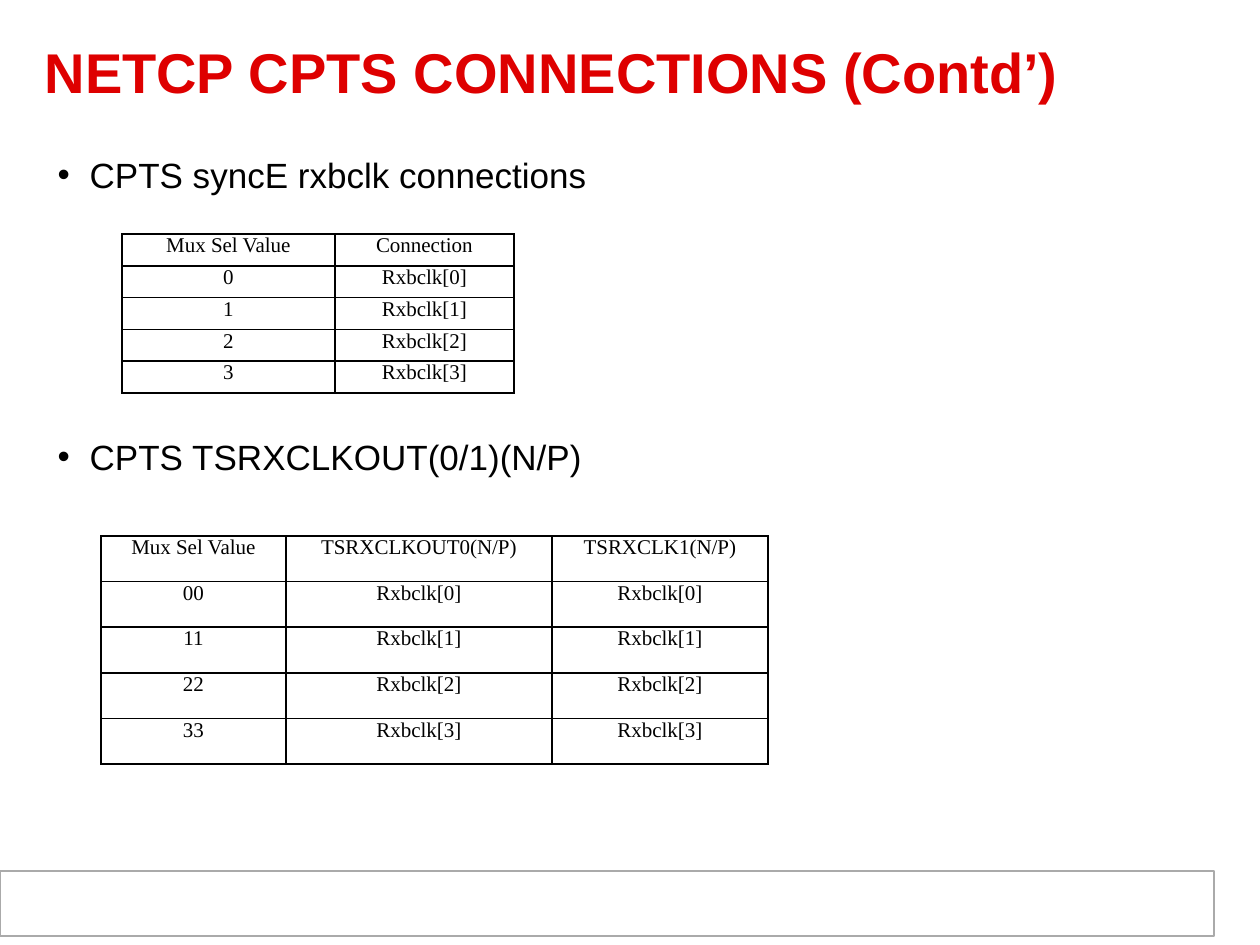
import pptx
import pptx.dml.color
import pptx.enum.shapes
import pptx.enum.text
import pptx.oxml
import pptx.oxml.ns
import pptx.util
from dataclasses import dataclass

ALIGN = pptx.enum.text.PP_ALIGN
ANCHOR = pptx.enum.text.MSO_ANCHOR
FIT = pptx.enum.text.MSO_AUTO_SIZE
PT = pptx.util.Pt


def px(count):
    return round(count * 914400 / 126)


def rgb(code):
    return pptx.dml.color.RGBColor.from_string(code)


def assign(target, values):
    for name, value in values.items():
        setattr(target, name, value)


@dataclass(frozen=True)
class Theme:
    red: str = "DE0000"
    black: str = "000000"
    white: str = "FFFFFF"
    gray: str = "AAAAAA"
    sans: str = "Arial"
    serif: str = "Times New Roman"
    title: int = 32
    body: int = 20
    cell: int = 12


class Deck:
    def __init__(self, theme):
        self.theme = theme
        self.file = pptx.Presentation()
        assign(self.file, {"slide_width": px(1260), "slide_height": px(945)})
        self.slide = self.file.slides.add_slide(self.file.slide_layouts[1])

    def place(self, shape, box):
        assign(shape, dict(zip(("left", "top", "width", "height"), map(px, box))))

    def style(self, para, face, size, color, bold=False):
        assign(para.font, {"name": face, "size": PT(size), "bold": bold})
        para.font.color.rgb = rgb(color)

    def bar(self, *box):
        shape = self.slide.shapes.add_shape(
            pptx.enum.shapes.MSO_SHAPE.RECTANGLE, *map(px, box))
        shape.shadow.inherit = False
        shape.fill.solid()
        shape.fill.fore_color.rgb = rgb(self.theme.white)
        shape.line.color.rgb = rgb(self.theme.gray)
        shape.line.width = PT(0.75)

    def title(self, text, *box):
        shape = self.slide.shapes.title
        self.place(shape, box)
        frame = shape.text_frame
        frame.text = text
        assign(frame, {"vertical_anchor": ANCHOR.MIDDLE, "auto_size": FIT.NONE})
        para = frame.paragraphs[0]
        assign(para, {"alignment": ALIGN.LEFT, "line_spacing": 0.85})
        self.style(para, self.theme.sans, self.theme.title, self.theme.red, True)

    def bullets(self, items, gap, *box):
        """Fill the body, leaving gap points between items for the tables."""
        shape = self.slide.placeholders[1]
        self.place(shape, box)
        frame = shape.text_frame
        frame.text = "\n".join(items)
        assign(frame, {"vertical_anchor": ANCHOR.TOP, "auto_size": FIT.NONE})
        for index, para in enumerate(frame.paragraphs):
            para.space_before = PT(gap if index else 0)
            props = para._p.get_or_add_pPr()
            props.set("marL", str(px(32)))
            props.set("indent", str(-px(32)))
            mark = pptx.oxml.parse_xml(
                f'<a:buChar {pptx.oxml.ns.nsdecls("a")} char="•"/>')
            props.append(mark)
            self.style(para, self.theme.sans, self.theme.body, self.theme.black)

    def border(self, cell):
        props = cell._tc.get_or_add_tcPr()
        for index, side in enumerate("LRTB"):
            line = pptx.oxml.parse_xml(
                f'<a:ln{side} {pptx.oxml.ns.nsdecls("a")} w="{PT(1)}">'
                f'<a:solidFill><a:srgbClr val="{self.theme.black}"/></a:solidFill>'
                f'</a:ln{side}>')
            props.insert(index, line)

    def table(self, rows, widths, left, top, height):
        grid = self.slide.shapes.add_table(
            len(rows), len(widths), px(left), px(top),
            px(sum(widths)), px(height)).table
        assign(grid, {"first_row": False, "horz_banding": False})
        for column, width in zip(grid.columns, widths):
            column.width = px(width)
        for row, texts in zip(grid.rows, rows):
            row.height = px(height / len(rows))
            for cell, text in zip(row.cells, texts):
                assign(cell, {"text": text, "margin_left": px(9),
                              "margin_right": px(9), "margin_top": 0,
                              "margin_bottom": 0, "vertical_anchor": ANCHOR.TOP})
                cell.fill.background()
                self.border(cell)
                para = cell.text_frame.paragraphs[0]
                para.alignment = ALIGN.CENTER
                self.style(para, self.theme.serif, self.theme.cell, self.theme.black)


def main():
    deck = Deck(Theme())
    deck.bar(0, 871, 1214, 65)
    deck.title("NETCP CPTS CONNECTIONS (Contd’)", 32, 20, 1166, 112)
    deck.bullets(["CPTS syncE rxbclk connections", "CPTS TSRXCLKOUT(0/1)(N/P)"],
                 137, 45, 147, 1167, 680)

    clocks = [f"Rxbclk[{n}]" for n in range(4)]
    sync = [("Mux Sel Value", "Connection")]
    sync += [(str(n), clock) for n, clock in enumerate(clocks)]
    deck.table(sync, (213, 179), 122, 234, 159)

    output = [("Mux Sel Value", "TSRXCLKOUT0(N/P)", "TSRXCLK1(N/P)")]
    output += [(str(n) * 2, clock, clock) for n, clock in enumerate(clocks)]
    deck.table(output, (185, 266, 216), 101, 536, 228)
    deck.file.save("out.pptx")


if __name__ == "__main__":
    main()
